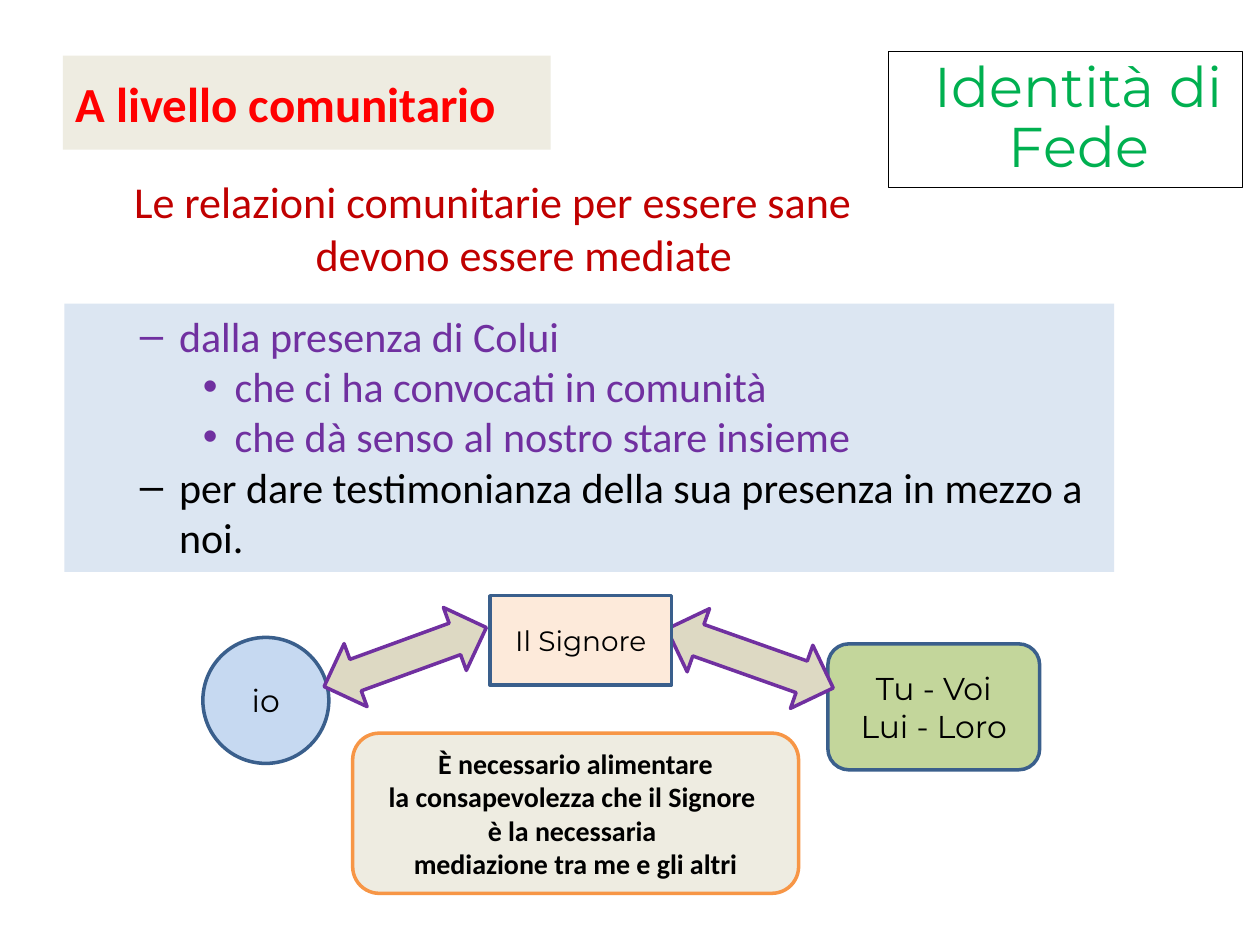
from dataclasses import dataclass, field
from typing import Optional

from lxml.etree import SubElement
from pptx import Presentation
from pptx.dml.color import RGBColor
from pptx.enum.shapes import MSO_SHAPE as Geo
from pptx.enum.text import MSO_ANCHOR as Anchor, PP_ALIGN as Align
from pptx.oxml.ns import qn
from pptx.util import Cm, Pt

COLORS = {
    "red": "FF0000", "dark_red": "C00000", "purple": "7030A0", "green": "00B050",
    "black": "000000", "navy": "3A5F8C", "orange": "F79646", "sky": "C6D9F1",
    "pale_blue": "DCE6F2", "leaf": "C3D69B", "sand": "DDD9C3", "ivory": "EEECE1",
    "peach": "FDEADA",
}
MARGINS = (0.25, 0.13, 0.25, 0.13)


@dataclass
class Para:
    text: str
    color: Optional[str] = None
    left: float = 0
    right: float = 0
    hang: float = 0
    bullet: str = ""
    level: int = 0


@dataclass
class Box:
    at: tuple
    geo: Geo = Geo.RECTANGLE
    fill: Optional[str] = None
    line: Optional[str] = None
    width: float = 2
    rotation: float = 0
    paras: list = field(default_factory=list)
    font: dict = field(default_factory=dict)
    color: str = "black"
    align: Align = Align.CENTER
    anchor: Anchor = Anchor.MIDDLE
    margins: tuple = MARGINS
    spacing: Optional[float] = None


def rgb(name: str) -> RGBColor:
    return RGBColor.from_string(COLORS[name])


def set_all(obj, values: dict) -> None:
    for key, value in values.items():
        setattr(obj, key, value)


def write_para(p, para: Para, box: Box) -> None:
    set_all(p, {"alignment": box.align, "level": para.level,
                "line_spacing": box.spacing})
    pPr = p._p.get_or_add_pPr()
    for key, value in (("marL", para.left), ("marR", para.right),
                       ("indent", -para.hang)):
        pPr.set(key, str(int(Cm(value))))
    if para.bullet:
        SubElement(pPr, qn("a:buFont"), typeface="Arial")
        SubElement(pPr, qn("a:buChar"), char=para.bullet)
    r = p.add_run()
    r.text = para.text
    set_all(r.font, box.font)
    r.font.color.rgb = rgb(para.color or box.color)


def draw(slide, box: Box) -> None:
    sp = slide.shapes.add_shape(box.geo, *map(Cm, box.at))
    sp.shadow.inherit = False
    sp.rotation = box.rotation
    if box.fill:
        sp.fill.solid()
        sp.fill.fore_color.rgb = rgb(box.fill)
    else:
        sp.fill.background()
    if box.line:
        sp.line.color.rgb = rgb(box.line)
        sp.line.width = Pt(box.width)
    else:
        sp.line.fill.background()
    tf = sp.text_frame
    sides = ("margin_left", "margin_top", "margin_right", "margin_bottom")
    set_all(tf, {"word_wrap": True, "vertical_anchor": box.anchor,
                 **dict(zip(sides, map(Cm, box.margins)))})
    for i, para in enumerate(box.paras):
        write_para(tf.add_paragraph() if i else tf.paragraphs[0], para, box)


def font(name: str, size: float, bold: bool = False) -> dict:
    return {"name": name, "size": Pt(size), "bold": bold}


DASH = {"left": 2.06, "hang": 0.79, "bullet": "–", "level": 1}
DOT = {"left": 3.18, "hang": 0.64, "bullet": "•", "level": 2}
ARROW = {"geo": Geo.LEFT_RIGHT_ARROW, "fill": "sand", "line": "purple"}
PERSON = {"line": "navy", "font": font("Montserrat", 18)}

BOXES = [
    # Statement and its points
    Box((2.06, 3.33, 16.03, 2.51), color="dark_red", font=font("Calibri", 25.2),
        paras=[Para("Le relazioni comunitarie per essere sane", right=0.28),
               Para("devono essere mediate", left=0.97)]),
    Box((1.3, 6.12, 21.16, 5.41), fill="pale_blue", color="purple",
        font=font("Calibri", 24), align=Align.LEFT, anchor=Anchor.TOP,
        paras=[Para("dalla presenza di Colui", **DASH),
               Para("che ci ha convocati in comunità", **DOT),
               Para("che dà senso al nostro stare insieme", **DOT),
               Para("per dare testimonianza della sua presenza in mezzo a noi.",
                    "black", **DASH)]),
    # Relation diagram
    Box((4.09, 12.85, 2.54, 2.54), Geo.OVAL, "sky", paras=[Para("io")], **PERSON),
    Box((16.69, 12.98, 4.27, 2.54), Geo.ROUNDED_RECTANGLE, "leaf",
        paras=[Para("Tu - Voi"), Para("Lui - Loro")], **PERSON),
    Box((6.43, 12.57, 3.48, 1.35), rotation=340, **ARROW),
    Box((13.34, 12.6, 3.56, 1.35), rotation=19.5, **ARROW),
    Box((9.88, 12.01, 3.66, 1.8), fill="peach", line="navy",
        font=font("Montserrat", 16), paras=[Para("Il Signore")]),
    # Conclusion
    Box((7.11, 14.78, 8.99, 3.23), Geo.ROUNDED_RECTANGLE, "ivory", "orange",
        font=font("Calibri", 16, True),
        paras=[Para("È necessario alimentare"),
               Para("la consapevolezza che il Signore", right=0.14),
               Para("è la necessaria", right=0.14),
               Para("mediazione tra me e gli altri")]),
    # Headings
    Box((1.27, 1.12, 9.83, 1.9), fill="ivory", color="red", align=Align.LEFT,
        font=font("Calibri", 28, True), paras=[Para("A livello comunitario")]),
    Box((17.91, 1.04, 7.14, 2.74), line="black", width=0.75, color="green",
        font=font("Montserrat", 32), margins=(0.64, 0.1, 0.1, 0.1), spacing=0.9,
        paras=[Para("Identità di Fede")]),
]


def main() -> None:
    prs = Presentation()
    set_all(prs, {"slide_width": Cm(25.4), "slide_height": Cm(19.05)})
    slide = prs.slides.add_slide(prs.slide_layouts[6])
    for box in BOXES:
        draw(slide, box)
    prs.save("out.pptx")


if __name__ == "__main__":
    main()
